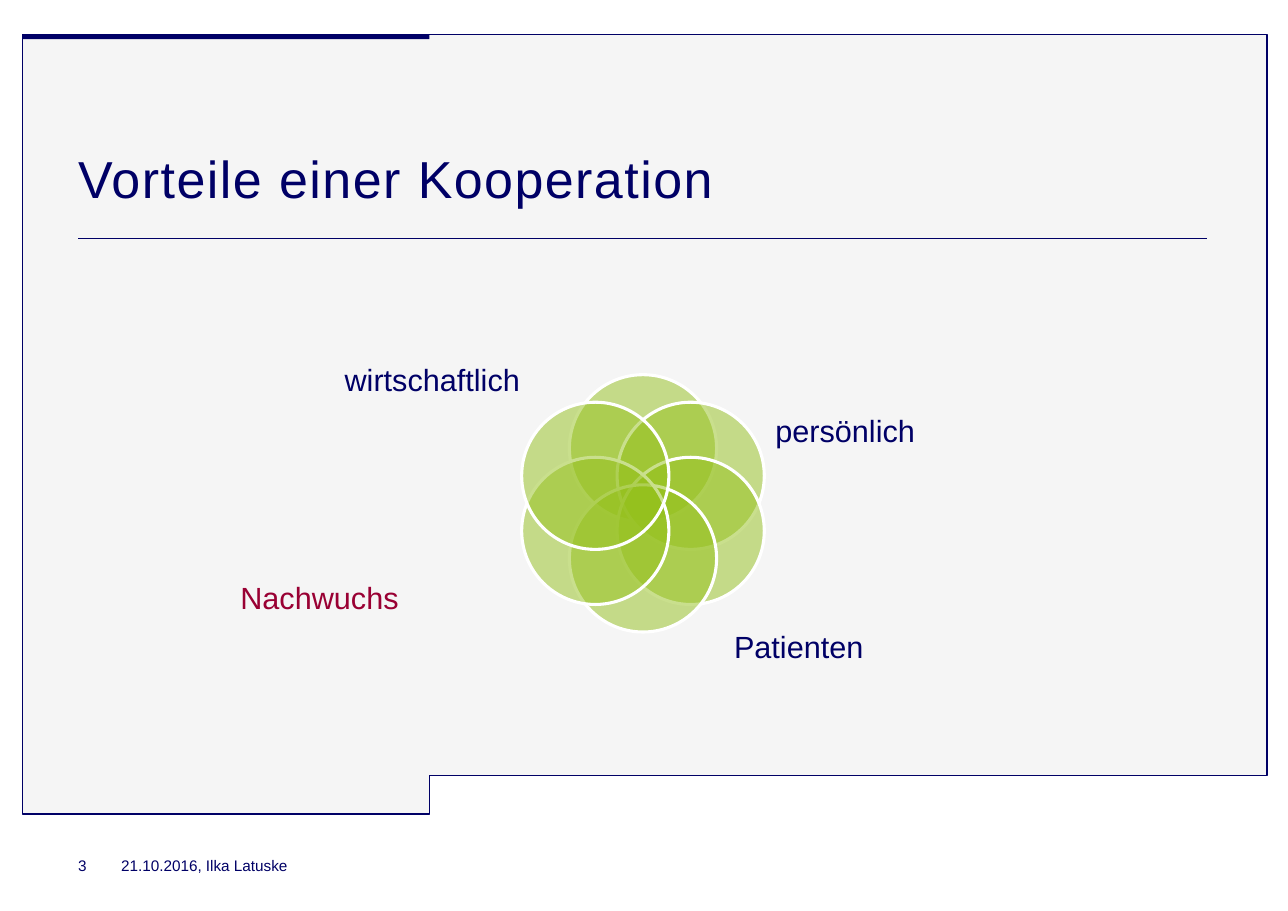
"""Build the slide on the advantages of a cooperation, with a ring of circles."""
from math import cos, radians, sin

from lxml.etree import SubElement
from pptx import Presentation
from pptx.dml.color import RGBColor
from pptx.enum.shapes import MSO_CONNECTOR, MSO_SHAPE
from pptx.enum.text import MSO_ANCHOR, PP_ALIGN
from pptx.oxml.ns import qn
from pptx.util import Pt

TITLE = "Vorteile einer Kooperation"
NAVY, RED, GREEN, GREY, WHITE = "000066", "990033", "95C11C", "F5F5F5", "FFFFFF"
FOOTERS = [("21.10.2016, Ilka Latuske", 79.2, 425.5), ("3", 51.1, 28.1)]
LABELS = [
    ("wirtschaftlich", NAVY, (222.5, 216.7, 120.2, 65.5)),
    ("persönlich", NAVY, (495.4, 247, 113.8, 72)),
    ("Patienten", NAVY, (465.1, 383.8, 113.8, 79.9)),
    ("Nachwuchs", RED, (151.9, 352.1, 113.8, 79.9)),
]
PANEL = [(14.7, 22.6), (14.7, 532), (280.5, 532), (280.5, 506.8),
         (828, 506.8), (828, 22.6)]
CENTER_X, CENTER_Y = 420.2, 329
CIRCLES, ORBIT, DIAMETER = 6, 36, 96.2


def color(code):
    return RGBColor.from_string(code)


def paint(shape, fill, line=None, width=0):
    shape.shadow.inherit = False
    shape.fill.solid()
    shape.fill.fore_color.rgb = color(fill)
    if line:
        shape.line.color.rgb = color(line)
        shape.line.width = Pt(width)
    else:
        shape.line.fill.background()


def write(box, text, size, code, align=PP_ALIGN.LEFT, anchor=MSO_ANCHOR.TOP):
    frame = box.text_frame
    frame.word_wrap = True
    frame.margin_left = frame.margin_right = frame.margin_top = frame.margin_bottom = 0
    frame.vertical_anchor = anchor
    para = frame.paragraphs[0]
    para.text = text
    para.alignment = align
    para.font.name = "Arial"
    para.font.size = Pt(size)
    para.font.color.rgb = color(code)
    return para


def add_frame(page):
    (start_x, start_y), *corners = PANEL
    outline = page.shapes.build_freeform(Pt(start_x), Pt(start_y))
    outline.add_line_segments([(Pt(x), Pt(y)) for x, y in corners])
    paint(outline.convert_to_shape(), GREY, NAVY, 0.75)
    bar = page.shapes.add_shape(
        MSO_SHAPE.RECTANGLE, Pt(start_x), Pt(start_y), Pt(266), Pt(3))
    paint(bar, NAVY)
    rule = page.shapes.add_connector(
        MSO_CONNECTOR.STRAIGHT, Pt(51.1), Pt(155.9), Pt(789), Pt(155.9))
    rule.line.color.rgb = color(NAVY)
    rule.line.width = Pt(0.5)
    SubElement(rule._element.spPr, qn("a:effectLst"))


def add_title(page):
    title = page.shapes.title
    page.shapes._spTree.append(title._element)
    title.left, title.top, title.width, title.height = map(Pt, (51.1, 48.2, 738, 88.6))
    para = write(title, TITLE, 34, NAVY, anchor=MSO_ANCHOR.BOTTOM)
    para.runs[0].font._element.set("spc", "100")


def add_circles(page):
    for index in range(CIRCLES):
        angle = radians(360 / CIRCLES * index - 90)
        left = CENTER_X + ORBIT * cos(angle) - DIAMETER / 2
        top = CENTER_Y + ORBIT * sin(angle) - DIAMETER / 2
        circle = page.shapes.add_shape(
            MSO_SHAPE.OVAL, Pt(left), Pt(top), Pt(DIAMETER), Pt(DIAMETER))
        paint(circle, GREEN, WHITE, 2)
        fill = circle._element.spPr.find(qn("a:solidFill"))
        SubElement(fill[0], qn("a:alpha"), val="50000")


def add_texts(page):
    for text, left, width in FOOTERS:
        box = page.shapes.add_textbox(Pt(left), Pt(559.4), Pt(width), Pt(17.3))
        write(box, text, 10, NAVY)
    for text, code, place in LABELS:
        box = page.shapes.add_textbox(*map(Pt, place))
        para = write(box, text, 20, code, PP_ALIGN.CENTER, MSO_ANCHOR.MIDDLE)
        para.line_spacing = 0.9


def main():
    deck = Presentation()
    deck.slide_width, deck.slide_height = Pt(841.68), Pt(595.44)
    page = deck.slides.add_slide(deck.slide_layouts[5])
    add_frame(page)
    add_title(page)
    add_circles(page)
    add_texts(page)
    deck.save("out.pptx")


if __name__ == "__main__":
    main()
